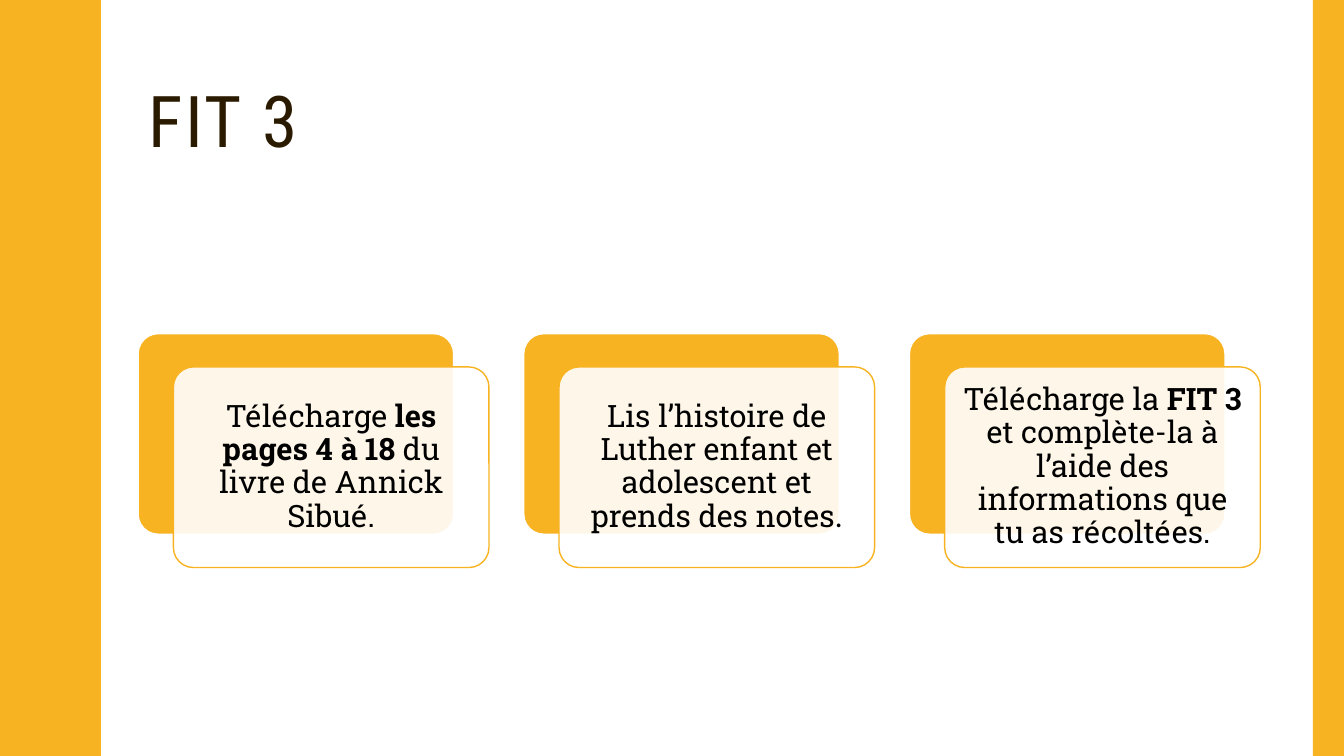
from lxml import etree
from pptx import Presentation
from pptx import util as u
from pptx.dml.color import RGBColor
from pptx.enum import shapes, text
from pptx.oxml.ns import qn

WIDTH, HEIGHT = 13.33, 7.5
WAVE_PERIOD = 1.5
# Outline of the rising half of one wave, as (x, y) in inches
HALF_WAVE = [(0.78, 0), (0.78, 0.07), (0.79, 0.14), (0.8, 0.2), (0.81, 0.25),
             (0.83, 0.29), (0.85, 0.33), (0.87, 0.38), (0.89, 0.42), (0.91, 0.46),
             (0.93, 0.5), (0.95, 0.55), (0.96, 0.61), (0.97, 0.68), (0.97, 0.75)]
CARD_LEFT, CARD_TOP, CARD_STEP = 1.37, 3.31, 3.825
CARD_WIDTH, CARD_HEIGHT = 3.13, 1.99
CARD_SHIFT_X, CARD_SHIFT_Y = 0.35, 0.33

# Each step is a list of (words, bold, font)
BODY_FONT = "Roboto Slab"
STEPS = [
    [("Télécharge ", False, BODY_FONT), ("les pages 4 à 18", True, BODY_FONT),
     (" du livre de Annick Sibué.", False, BODY_FONT)],
    [("Lis l’histoire de Luther enfant et adolescent et prends des notes", False, BODY_FONT),
     (".", False, "Calibri")],
    [("Télécharge la ", False, BODY_FONT), ("FIT 3 ", True, BODY_FONT),
     ("et complète-la à l’aide des informations que tu as récoltées.", False, BODY_FONT)],
]


def color(value):
    return RGBColor.from_string(value)


class SlidePainter:
    accent, dark, light, ink = "F8B323", "2A1A00", "FFFFFF", "000000"
    title_font = "Roboto Condensed"

    def __init__(self, page):
        self.page = page

    def paint(self, shape, fill, line=None, opacity=None):
        """Fill and outline a shape; opacity is a percentage."""
        shape.shadow.inherit = False
        shape.fill.solid()
        shape.fill.fore_color.rgb = color(fill)
        if opacity is not None:
            tint = shape.fill._xPr.find(".//" + qn("a:srgbClr"))
            etree.SubElement(tint, qn("a:alpha"), val=str(opacity * 1000))
        if line:
            shape.line.color.rgb = color(line)
            shape.line.width = u.Pt(1)
        else:
            shape.line.fill.background()

    def wavy_band(self):
        falling = [(x, WAVE_PERIOD - y) for x, y in reversed(HALF_WAVE[:-1])]
        wave = HALF_WAVE + falling
        edge = [(x, y + count * WAVE_PERIOD)
                for count in range(round(HEIGHT / WAVE_PERIOD)) for x, y in wave]
        builder = self.page.shapes.build_freeform(0, 0, scale=u.Inches(1))
        builder.add_line_segments(edge + [(0, HEIGHT)], close=True)
        self.paint(builder.convert_to_shape(), self.accent)

    def side_bar(self, left, width):
        bar = self.page.shapes.add_shape(
            shapes.MSO_SHAPE.RECTANGLE, u.Inches(left), 0, u.Inches(width), u.Inches(HEIGHT))
        self.paint(bar, self.accent)

    def title(self, words, left, top, width, height):
        box = self.page.shapes.add_textbox(*map(u.Inches, (left, top, width, height)))
        frame = box.text_frame
        frame.word_wrap = True
        frame.vertical_anchor = text.MSO_ANCHOR.MIDDLE
        para = frame.paragraphs[0]
        para.line_spacing = 0.9
        para.font.name, para.font.size = self.title_font, u.Pt(51)
        para.font.color.rgb = color(self.dark)
        span = para.add_run()
        span.text = words
        span.font._element.set("spc", "200")

    def rounded_card(self, left, top):
        card = self.page.shapes.add_shape(
            shapes.MSO_SHAPE.ROUNDED_RECTANGLE,
            *map(u.Inches, (left, top, CARD_WIDTH, CARD_HEIGHT)))
        card.adjustments[0] = 0.1
        return card

    def step(self, left, top, spans):
        """Draw a solid card with a translucent text card shifted over it."""
        self.paint(self.rounded_card(left, top), self.accent, self.light)
        front = self.rounded_card(left + CARD_SHIFT_X, top + CARD_SHIFT_Y)
        self.paint(front, self.light, self.accent, opacity=90)
        frame = front.text_frame
        frame.word_wrap = True
        frame.vertical_anchor = text.MSO_ANCHOR.MIDDLE
        frame.margin_left = frame.margin_right = u.Inches(0.09)
        frame.margin_top = frame.margin_bottom = u.Inches(0.09)
        para = frame.paragraphs[0]
        para.alignment = text.PP_ALIGN.CENTER
        para.line_spacing = 0.9
        para.font.size = u.Pt(22)
        para.font.color.rgb = color(self.ink)
        for words, bold, font in spans:
            span = para.add_run()
            span.text = words
            span.font.bold = bold
            span.font.name = font


def main():
    deck = Presentation()
    deck.slide_width, deck.slide_height = u.Inches(WIDTH), u.Inches(HEIGHT)
    painter = SlidePainter(deck.slides.add_slide(deck.slide_layouts[6]))
    painter.title("FIT 3", 1.37, 0.42, 11.13, 1.63)
    painter.wavy_band()
    painter.side_bar(13.02, 0.31)
    for index, spans in enumerate(STEPS):
        painter.step(CARD_LEFT + index * CARD_STEP, CARD_TOP, spans)
    deck.save("out.pptx")


if __name__ == "__main__":
    main()
